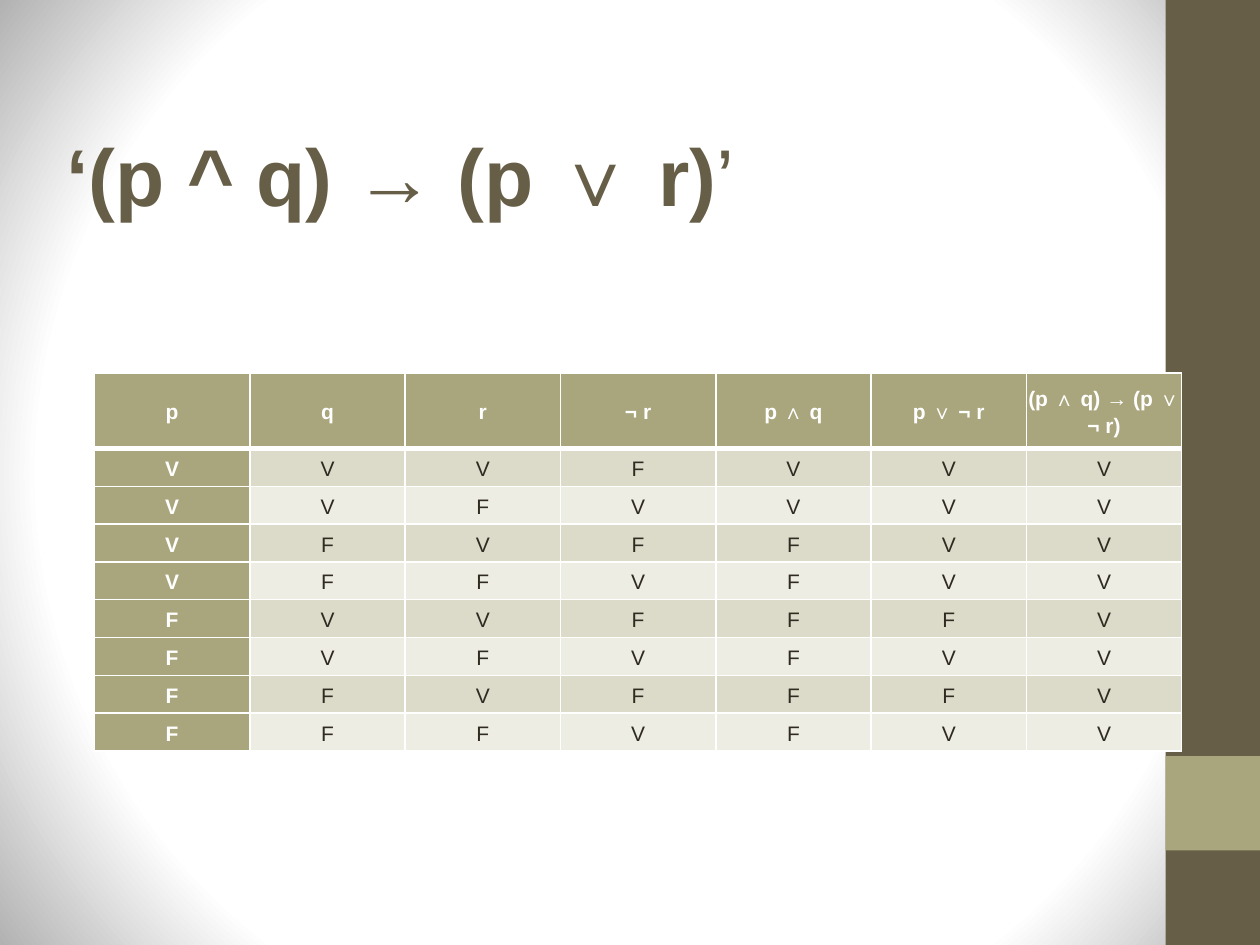
import pptx
import pptx.dml.color
import pptx.enum.shapes
import pptx.enum.text
import pptx.oxml
import pptx.oxml.ns
import pptx.util

# Content
TITLE_RUNS = [("‘(p ^ q) → (p ∨ r)", True), ("’", False)]
HEADERS = ["p", "q", "r", "¬ r", "p ∧ q", "p ∨ ¬ r", "(p ∧ q) → (p ∨ ¬ r)"]
TRUTH_ROWS = ["VVVFVVV", "VVFVVVV", "VFVFFVV", "VFFVFVV",
              "FVVFFFV", "FVFVFVV", "FFVFFFV", "FFFVFVV"]

# Style
FONT = "Arial"
COLORS = {"brown": "675E47", "olive": "A9A57C", "band_dark": "DCDBCA",
          "band_light": "EDEDE4", "ink": "2F2B20", "white": "FFFFFF"}
BACKGROUND_STOPS = [(0, "FEFEFE"), (75, "FFFFFF"), (100, "B2B2B2")]

# Layout
SLIDE_WIDTH, SLIDE_HEIGHT = 10, 7.5
BAR_WIDTH = 0.075 * SLIDE_WIDTH
BAR_LEFT = SLIDE_WIDTH - BAR_WIDTH
TABLE_LEFT, TABLE_TOP, TABLE_WIDTH = 0.75, 2.96, 8.63
HEADER_HEIGHT, ROW_HEIGHT = 0.6, 0.3
CELL_MARGIN = pptx.util.Inches(0.01)


def rgb(name):
    return pptx.dml.color.RGBColor.from_string(COLORS[name])


def inches(*lengths):
    return [pptx.util.Inches(length) for length in lengths]


def set_background(slide):
    slide.background.fill.gradient()
    gradient = next(slide.element.iter(pptx.oxml.ns.qn("a:gradFill")))
    stops = "".join(f'<a:gs pos="{share * 1000}"><a:srgbClr val="{color}"/></a:gs>'
                    for share, color in BACKGROUND_STOPS)
    radial = pptx.oxml.parse_xml(
        f'<a:gradFill {pptx.oxml.ns.nsdecls("a")} rotWithShape="1">'
        f'<a:gsLst>{stops}</a:gsLst><a:path path="circle">'
        '<a:fillToRect l="50000" t="50000" r="50000" b="50000"/></a:path></a:gradFill>')
    gradient.getparent().replace(gradient, radial)


def add_block(slide, top, height, color):
    block = slide.shapes.add_shape(pptx.enum.shapes.MSO_SHAPE.RECTANGLE,
                                   *inches(BAR_LEFT, top, BAR_WIDTH, height))
    block.shadow.inherit = False
    block.fill.solid()
    block.fill.fore_color.rgb = rgb(color)
    block.line.fill.background()


def add_title(slide):
    frame = slide.shapes.add_textbox(*inches(0.43, 0.76, 9, 1.25)).text_frame
    frame.word_wrap = True
    frame.vertical_anchor = pptx.enum.text.MSO_ANCHOR.MIDDLE
    for text, bold in TITLE_RUNS:
        run = frame.paragraphs[0].add_run()
        run.text = text
        run.font.name = FONT
        run.font.size = pptx.util.Pt(46)
        run.font.bold = bold
        run.font.color.rgb = rgb("brown")


def set_borders(cell, top, bottom):
    properties = cell._tc.get_or_add_tcPr()
    for side, points in (("L", 1), ("R", 1), ("T", top), ("B", bottom)):
        properties.append(pptx.oxml.parse_xml(
            f'<a:ln{side} {pptx.oxml.ns.nsdecls("a")} w="{pptx.util.Pt(points)}">'
            f'<a:solidFill><a:srgbClr val="{COLORS["white"]}"/></a:solidFill></a:ln{side}>'))


def style_cell(cell, text, row, column):
    is_heading = row == 0 or column == 0
    band = "band_dark" if row % 2 else "band_light"
    set_borders(cell, top=3 if row == 1 else 1, bottom=3 if row == 0 else 1)
    cell.fill.solid()
    cell.fill.fore_color.rgb = rgb("olive" if is_heading else band)
    cell.margin_left = cell.margin_right = CELL_MARGIN
    cell.margin_top = cell.margin_bottom = CELL_MARGIN
    cell.vertical_anchor = pptx.enum.text.MSO_ANCHOR.MIDDLE
    cell.text = text
    paragraph = cell.text_frame.paragraphs[0]
    paragraph.alignment = pptx.enum.text.PP_ALIGN.CENTER
    paragraph.line_spacing = 1.15
    paragraph.font.name = FONT
    paragraph.font.size = pptx.util.Pt(12)
    paragraph.font.bold = is_heading
    paragraph.font.color.rgb = rgb("white" if is_heading else "ink")


def add_truth_table(slide):
    rows = [HEADERS, *TRUTH_ROWS]
    height = HEADER_HEIGHT + ROW_HEIGHT * len(TRUTH_ROWS)
    table = slide.shapes.add_table(
        len(rows), len(HEADERS),
        *inches(TABLE_LEFT, TABLE_TOP, TABLE_WIDTH, height)).table
    table.first_col = True
    for row, values in enumerate(rows):
        table.rows[row].height = pptx.util.Inches(ROW_HEIGHT if row else HEADER_HEIGHT)
        for column, text in enumerate(values):
            style_cell(table.cell(row, column), text, row, column)


def main():
    presentation = pptx.Presentation()
    presentation.slide_width, presentation.slide_height = inches(SLIDE_WIDTH, SLIDE_HEIGHT)
    slide = presentation.slides.add_slide(presentation.slide_layouts[6])
    set_background(slide)
    # Side bar with its accent square
    add_block(slide, 0, SLIDE_HEIGHT, "brown")
    add_block(slide, 0.8 * SLIDE_HEIGHT, BAR_WIDTH, "olive")
    # Formula and truth table
    add_title(slide)
    add_truth_table(slide)
    presentation.save("out.pptx")


if __name__ == "__main__":
    main()
